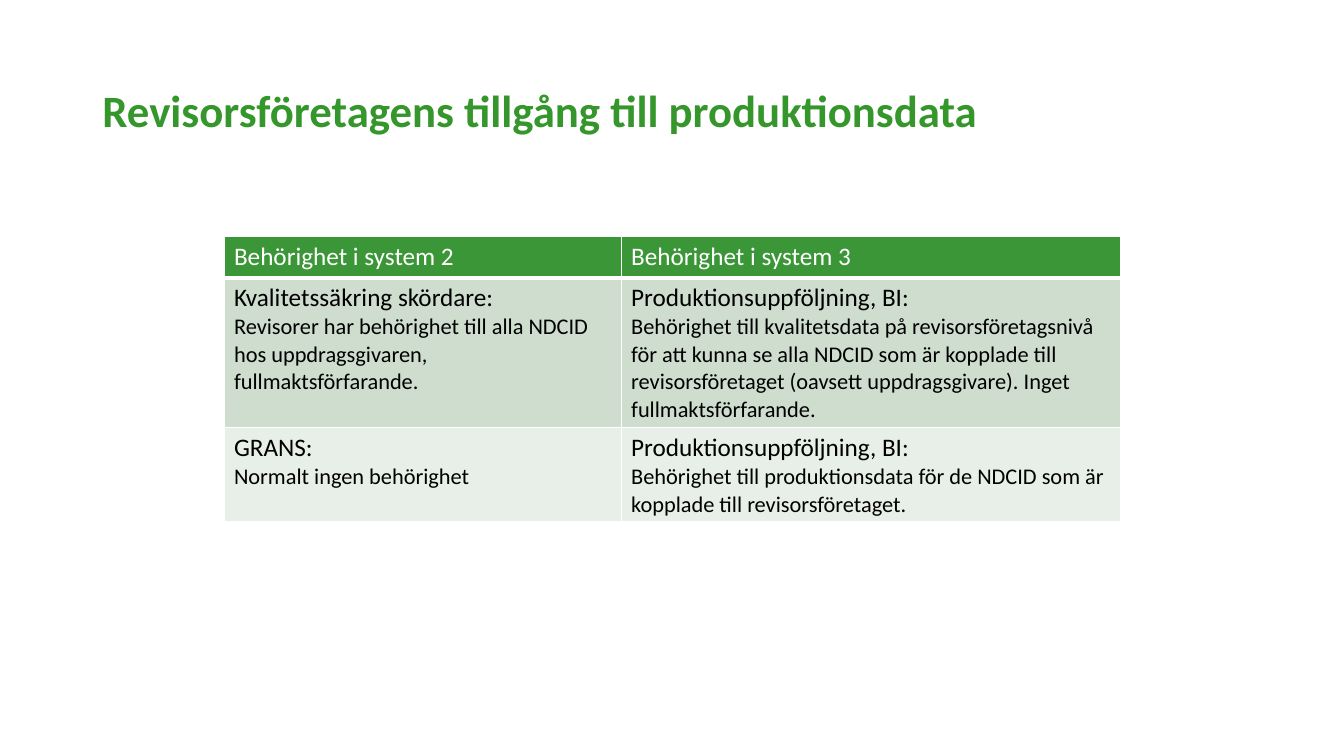
from dataclasses import dataclass

from lxml.etree import SubElement
from pptx import Presentation
from pptx.dml.color import RGBColor
from pptx.enum.text import MSO_ANCHOR
from pptx.oxml.ns import qn
from pptx.util import Pt

GREEN, WHITE, BLACK = "35962B", "FFFFFF", "000000"
HEAD_SIZE, BODY_SIZE = 18, 16


@dataclass
class Row:
    height: float
    fill: str
    color: str
    cells: list[list[str]]
    bottom: float = 1


COL_WIDTHS = [283.7, 356.4]
ROWS = [
    Row(29.2, "3B9637", WHITE, [["Behörighet i system 2"], ["Behörighet i system 3"]], 3),
    Row(107, "CEDDCE", BLACK, [
        ["Kvalitetssäkring skördare:",
         "Revisorer har behörighet till alla NDCID hos uppdragsgivaren, "
         "fullmaktsförfarande."],
        ["Produktionsuppföljning, BI:",
         "Behörighet till kvalitetsdata på revisorsföretagsnivå för att kunna se alla "
         "NDCID som är kopplade till revisorsföretaget (oavsett uppdragsgivare). "
         "Inget fullmaktsförfarande."],
    ]),
    Row(67.5, "E8EFE8", BLACK, [
        ["GRANS:", "Normalt ingen behörighet"],
        ["Produktionsuppföljning, BI:",
         "Behörighet till produktionsdata för de NDCID som är kopplade till "
         "revisorsföretaget."],
    ]),
]


def rgb(color: str) -> RGBColor:
    return RGBColor.from_string(color)


def add_run(p, text: str, size: float, color: str, bold: bool = False) -> None:
    r = p.add_run()
    r.text = text
    for name, value in {"name": "Calibri", "size": Pt(size), "bold": bold}.items():
        setattr(r.font, name, value)
    r.font.color.rgb = rgb(color)


def set_borders(cell, bottom: float) -> None:
    props = cell._tc.get_or_add_tcPr()
    widths = {"a:lnL": 1, "a:lnR": 1, "a:lnT": 1, "a:lnB": bottom}
    for i, (tag, width) in enumerate(widths.items()):
        line = SubElement(props, qn(tag), w=str(Pt(width)))
        fill = SubElement(line, qn("a:solidFill"))
        SubElement(fill, qn("a:srgbClr"), val=WHITE)
        props.insert(i, line)  # borders precede the cell fill


def fill_cell(cell, row: Row, texts: list[str]) -> None:
    cell.fill.solid()
    cell.fill.fore_color.rgb = rgb(row.fill)
    set_borders(cell, row.bottom)
    tf = cell.text_frame
    for i, text in enumerate(texts):
        p = tf.add_paragraph() if i else tf.paragraphs[0]
        add_run(p, text, BODY_SIZE if i else HEAD_SIZE, row.color)


def add_title(s, text: str) -> None:
    tf = s.shapes.add_textbox(Pt(66), Pt(28.75), Pt(727), Pt(104.4)).text_frame
    for name, value in {"word_wrap": True, "vertical_anchor": MSO_ANCHOR.MIDDLE}.items():
        setattr(tf, name, value)
    p = tf.paragraphs[0]
    p.line_spacing = 0.9
    add_run(p, text, 32, GREEN, bold=True)


def add_access_table(s) -> None:
    table = s.shapes.add_table(
        len(ROWS), len(COL_WIDTHS), Pt(160), Pt(169.2),
        Pt(sum(COL_WIDTHS)), Pt(sum(row.height for row in ROWS))).table
    for col, width in zip(table.columns, COL_WIDTHS):
        col.width = Pt(width)
    for i, row in enumerate(ROWS):
        table.rows[i].height = Pt(row.height)
        for j, texts in enumerate(row.cells):
            fill_cell(table.cell(i, j), row, texts)


def main() -> None:
    prs = Presentation()
    prs.slide_width, prs.slide_height = Pt(960), Pt(540)
    s = prs.slides.add_slide(prs.slide_layouts[6])
    # Heading
    add_title(s, "Revisorsföretagens tillgång till produktionsdata")
    # Access rights before and after
    add_access_table(s)
    prs.save("out.pptx")


if __name__ == "__main__":
    main()
